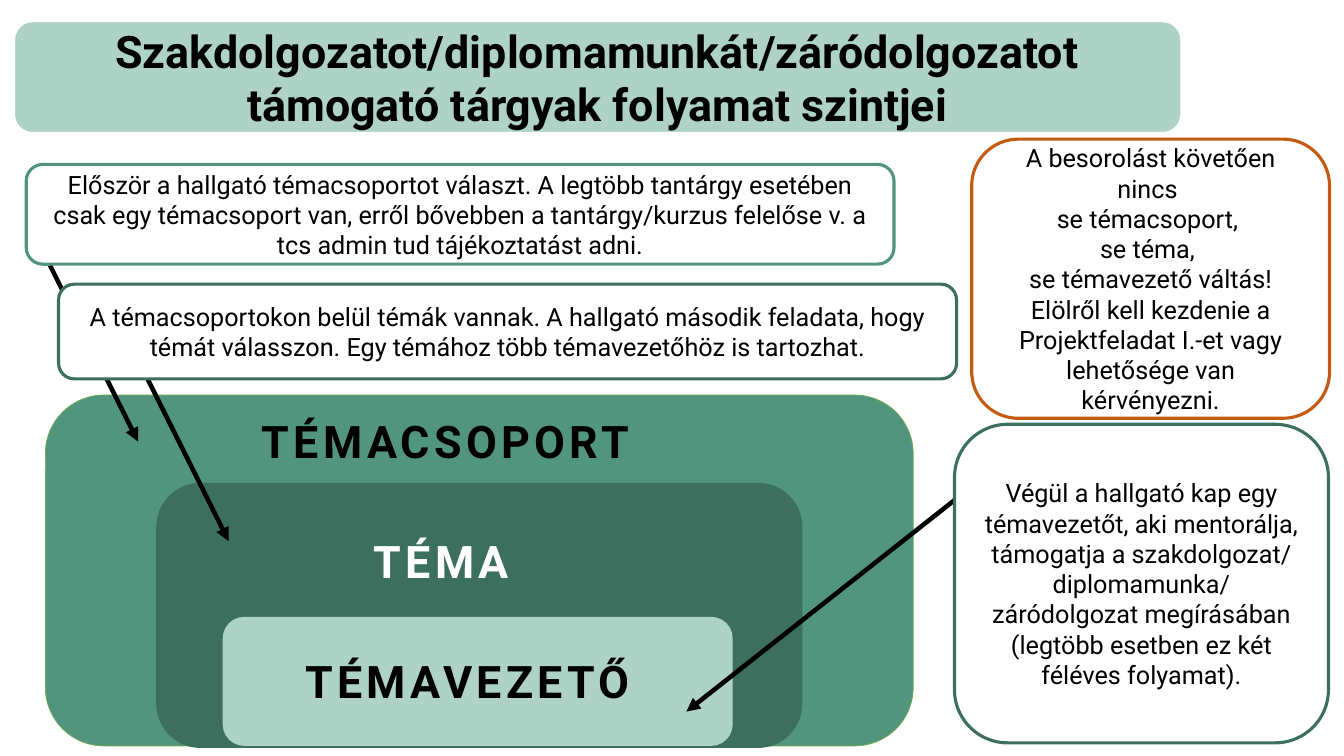
from dataclasses import dataclass

from lxml.etree import SubElement
from pptx import Presentation
from pptx.dml.color import RGBColor
from pptx.enum.shapes import MSO_CONNECTOR as Link, MSO_SHAPE as Form
from pptx.enum.text import MSO_ANCHOR as Anchor, MSO_AUTO_SIZE as Fit, PP_ALIGN as Align
from pptx.oxml.ns import qn
from pptx.util import Pt

FONT = "Roboto"
BLACK, WHITE = "000000", "FFFFFF"
GREEN, DARK, PALE, RUST = "52957E", "3D6F5E", "AED2C6", "C55A11"

Area = tuple[float, float, float, float]  # left, top, width, height


@dataclass
class Level:
    area: Area
    fill: str
    name: str
    label: Area
    ink: str = BLACK
    edge: str = ""


@dataclass
class Note:
    area: Area
    edge: str
    lines: list[str]


@dataclass
class Arrow:
    start: tuple[float, float]
    end: tuple[float, float]


TITLE = "Szakdolgozatot/diplomamunkát/záródolgozatot támogató tárgyak folyamat szintjei"
BANNER = (10, 15.1, 833.8, 79.9)

LEVELS = [
    Level((32.4, 282.2, 619.9, 250.6), GREEN, "TÉMACSOPORT", (180, 291.6, 324, 46), edge="70AD47"),
    Level((111.6, 344.9, 461.5, 189.4), DARK, "TÉMA", (259.9, 377.3, 146.9, 46), ink=WHITE),
    Level((159.1, 440.6, 364.3, 92.2), PALE, "TÉMAVEZETŐ", (211, 463, 279.4, 46)),
]

ARROWS = [
    Arrow((33.1, 184.3), (98.6, 315.4)),
    Arrow((97.9, 255.6), (163.4, 386.6)),
    Arrow((712.1, 333.4), (490.3, 508.3)),
]

NOTES = [
    Note((41.8, 203, 641.5, 67.7), DARK, [
        "A témacsoportokon belül témák vannak. A hallgató második feladata, hogy "
        "témát válasszon. Egy témához több témavezetőhöz is tartozhat."]),
    Note((681.8, 303.1, 267.1, 227.5), DARK, [
        "Végül a hallgató kap egy témavezetőt, aki mentorálja, támogatja a szakdolgozat/",
        "diplomamunka/",
        "záródolgozat megírásában (legtöbb esetben ez két féléves folyamat)."]),
    Note((18.7, 117.4, 619.9, 71.3), GREEN, [
        "Először a hallgató témacsoportot választ. A legtöbb tantárgy esetében csak "
        "egy témacsoport van, erről bővebben a tantárgy/kurzus felelőse v. a tcs "
        "admin tud tájékoztatást adni."]),
    Note((694.1, 99.4, 255.6, 199.4), RUST, [
        "A besorolást követően nincs ",
        "se témacsoport, ",
        "se téma, ",
        "se témavezető váltás! Elölről kell kezdenie a Projektfeladat I.-et vagy "
        "lehetősége van kérvényezni."]),
]


def paint(color, code: str) -> None:
    color.rgb = RGBColor.from_string(code)


def points(area: Area) -> list[Pt]:
    return [Pt(side) for side in area]


def write(shape, lines: list[str], size: float, ink: str = BLACK,
          bold: bool = False, align: Align = Align.CENTER) -> None:
    frame = shape.text_frame
    frame.word_wrap = True
    frame.auto_size = Fit.NONE
    frame.vertical_anchor = Anchor.MIDDLE
    frame.text = "\n".join(lines)
    for para in frame.paragraphs:
        para.alignment = align
        font = para.font
        font.name, font.size, font.bold = FONT, Pt(size), bold
        paint(font.color, ink)


def add_box(slide, area: Area, fill: str, edge: str = "", width: float = 0):
    box = slide.shapes.add_shape(Form.ROUNDED_RECTANGLE, *points(area))
    box.shadow.inherit = False
    box.fill.solid()
    paint(box.fill.fore_color, fill)
    if edge:
        paint(box.line.color, edge)
        box.line.width = Pt(width)
    else:
        box.line.fill.background()
    return box


def add_title(slide) -> None:
    add_box(slide, BANNER, PALE, WHITE, 1.5)
    title = slide.shapes.title
    title.left, title.top, title.width, title.height = points(BANNER)
    write(title, [TITLE], 32, bold=True)
    # Bring the text in front of its banner
    slide.shapes._spTree.append(title._element)


def add_level(slide, level: Level) -> None:
    add_box(slide, level.area, level.fill, level.edge, 0.5)
    label = slide.shapes.add_textbox(*points(level.label))
    write(label, [level.name], 32, level.ink, True, Align.LEFT)
    for run in label.text_frame.paragraphs[0].runs:
        run._r.get_or_add_rPr().set("spc", "300")


def add_arrow(slide, arrow: Arrow) -> None:
    line = slide.shapes.add_connector(Link.STRAIGHT, *points(arrow.start + arrow.end))
    paint(line.line.color, BLACK)
    line.line.width = Pt(3.25)
    SubElement(line.line._get_or_add_ln(), qn("a:tailEnd"), type="triangle")
    SubElement(line._element.spPr, qn("a:effectLst"))


def add_note(slide, note: Note) -> None:
    box = add_box(slide, note.area, WHITE, note.edge, 2.25)
    write(box, note.lines, 18)


def main() -> None:
    deck = Presentation()
    deck.slide_width, deck.slide_height = Pt(960), Pt(540)
    slide = deck.slides.add_slide(deck.slide_layouts[5])

    # Heading
    add_title(slide)

    # Nested levels, then arrows that run beneath the notes
    for level in LEVELS:
        add_level(slide, level)
    for arrow in ARROWS:
        add_arrow(slide, arrow)
    for note in NOTES:
        add_note(slide, note)

    deck.save("out.pptx")


if __name__ == "__main__":
    main()
